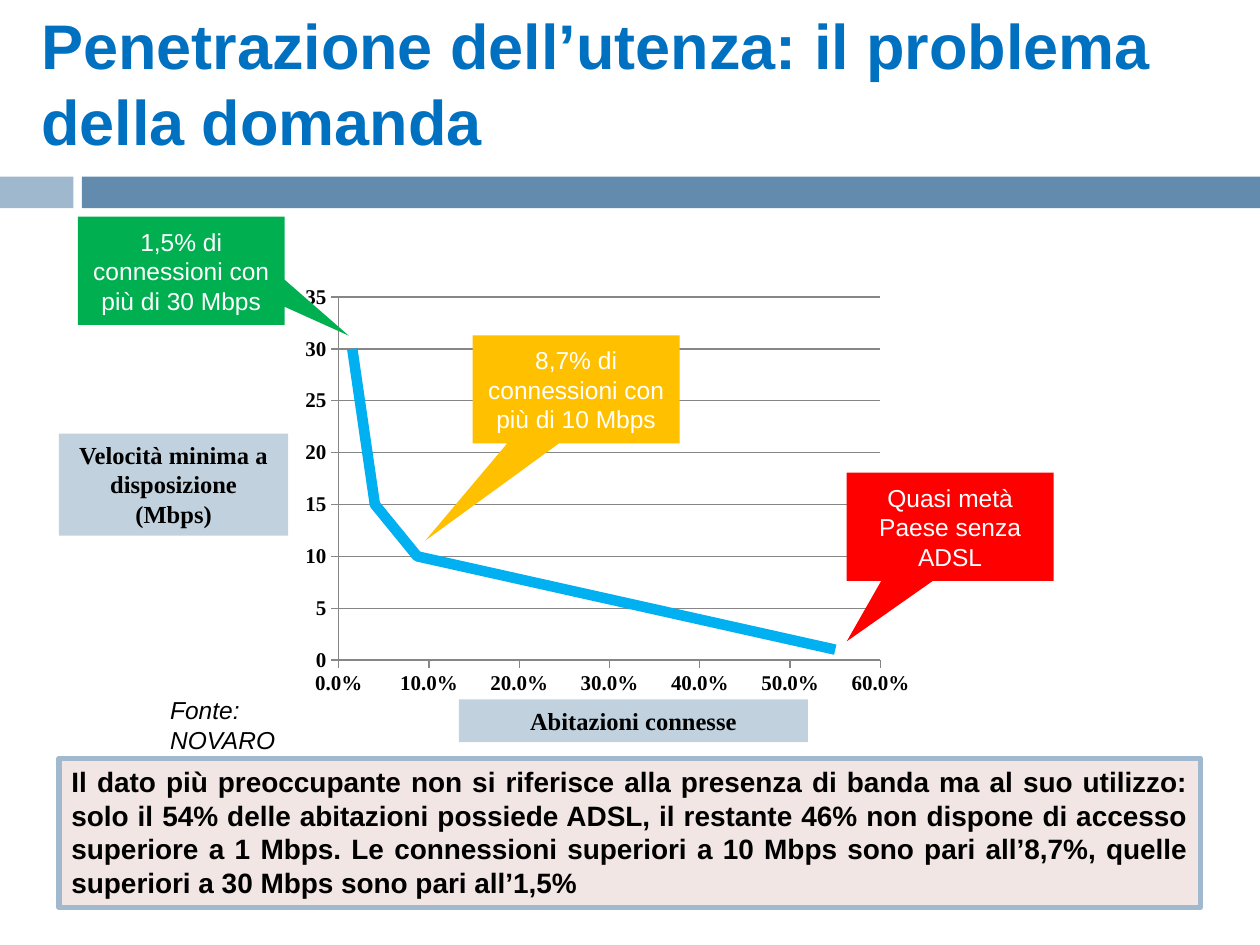
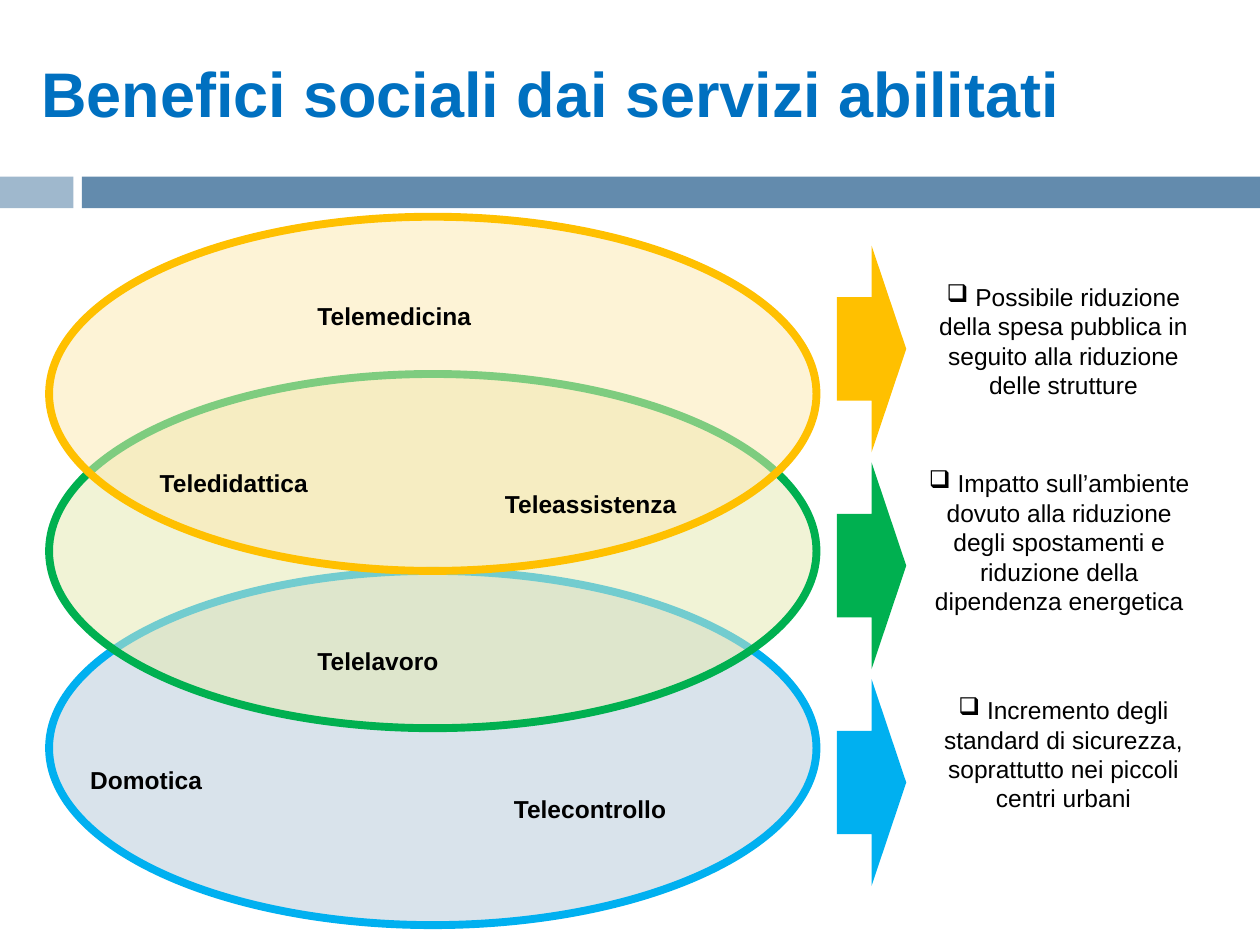
import lxml.etree
import pptx
import pptx.chart.data
import pptx.dml.color
import pptx.enum.chart
import pptx.enum.shapes
import pptx.enum.text
import pptx.oxml.ns
import pptx.util

Cm, Pt = pptx.util.Cm, pptx.util.Pt
SHAPE = pptx.enum.shapes.MSO_SHAPE
ALIGN = pptx.enum.text.PP_ALIGN
ANCHOR = pptx.enum.text.MSO_ANCHOR
qn = pptx.oxml.ns.qn

# Shared look
COLORS = {
    "title": "0070C0", "band_light": "9FB8CD", "band_dark": "638BAD",
    "black": "000000", "white": "FFFFFF", "grid": "868686",
    "red": "FF0000", "green": "00B050", "yellow": "FFC000", "blue": "00B0F0",
    "label": "C1D1DE", "message": "F1E6E3", "message_border": "A1B9CE",
    "pale_blue": "D9E3EB", "pale_green": "E4E9AF", "pale_yellow": "FCE9AF",
}
SANS, SERIF = "Arial", "Times New Roman"
SLIDE_SIZE = (25.4, 19.05)
BANDS = [("band_light", (0, 3.56, 1.48, 0.64)), ("band_dark", (1.65, 3.56, 23.75, 0.64))]

# Slide 1 content: boxes are left, top, width, height in cm
DEMAND_TITLE = ("Penetrazione dell’utenza: il problema della domanda", (0.58, 0.79, 24.13, 1.75))
CHART_BOX = (5.94, 5.56, 12.7, 8.61)
PLOT_AREA = {"x": 0.07, "y": 0.05, "w": 0.86, "h": 0.85}
SPEED_POINTS = [(0.55, 1), (0.087, 10), (0.04, 15), (0.015, 30)]
AXIS_LABELS = [
    ("Velocità minima a disposizione (Mbps)", (1.19, 8.74, 4.62, 2.06)),
    ("Abitazioni connesse", (9.25, 14.1, 7.04, 0.86)),
]
MESSAGE = (
    "Il dato più preoccupante non si riferisce alla presenza di banda ma al suo utilizzo: "
    "solo il 54% delle abitazioni possiede ADSL, il restante 46% non dispone di accesso "
    "superiore a 1 Mbps. Le connessioni superiori a 10 Mbps sono pari all’8,7%, quelle "
    "superiori a 30 Mbps sono pari all’1,5%",
    (1.19, 15.29, 23.01, 3.0),
)
CALLOUT_SIZE = (4.17, 2.18)
CALLOUTS = [  # text, colour, position, pointer offset
    ("Quasi metà Paese senza ADSL", "red", (17.07, 9.53), (-0.5, 1.06)),
    ("1,5% di connessioni con più di 30 Mbps", "green", (1.57, 4.37), (0.81, 0.6)),
    ("8,7% di connessioni con più di 10 Mbps", "yellow", (9.53, 6.76), (-0.73, 1.4)),
]
SOURCE = ("Fonte: NOVARO", (3.18, 13.89, 3.94, 0.86))

# Slide 2 content
BENEFITS_TITLE = ("Benefici sociali dai servizi abilitati", (0.58, 0.99, 22.94, 1.75))
ELLIPSE_LEFT, ELLIPSE_SIZE = 0.99, (15.47, 7.14)
ELLIPSES = [  # top, fill, outline, opacity in percent
    (11.51, "pale_blue", "blue", 100),
    (7.54, "pale_green", "green", 50),
    (4.37, "pale_yellow", "yellow", 50),
]
SERVICE_SIZE = (4.37, 0.86)
SERVICES = [
    ("Telemedicina", (6.15, 5.94)), ("Telelavoro", (6.15, 12.9)),
    ("Teledidattica", (2.97, 9.32)), ("Teleassistenza", (9.93, 9.73)),
    ("Domotica", (1.57, 15.29)), ("Telecontrollo", (10.11, 15.88)),
]
ARROW_LEFT, ARROW_TOP, ARROW_SIZE, ARROW_PITCH = 16.87, 4.95, (1.4, 4.17), 4.37
BENEFITS = [
    ("yellow", " Possibile riduzione della spesa pubblica in seguito alla riduzione delle strutture",
     (18.47, 5.56, 5.94, 2.64)),
    ("green", " Impatto sull’ambiente dovuto alla riduzione degli spostamenti e riduzione della "
     "dipendenza energetica", (18.47, 9.32, 5.77, 3.25)),
    ("blue", " Incremento degli standard di sicurezza, soprattutto nei piccoli centri urbani",
     (18.47, 13.89, 5.94, 2.64)),
]


def rgb(name):
    return pptx.dml.color.RGBColor.from_string(COLORS[name])


def lengths(box):
    return [Cm(value) for value in box]


def style_font(font, size, color="black", name=SANS, bold=False, italic=False):
    font.size, font.name, font.bold, font.italic = Pt(size), name, bold, italic
    font.color.rgb = rgb(color)


def write(shape, text, size=14, align=ALIGN.LEFT, anchor=ANCHOR.TOP, wrap=True, bullet=None, **font):
    frame = shape.text_frame
    frame.word_wrap, frame.vertical_anchor = wrap, anchor
    paragraph = frame.paragraphs[0]
    paragraph.alignment = align
    if bullet:
        properties = paragraph._p.get_or_add_pPr()
        properties.set("marL", "0")
        properties.set("indent", "0")
        lxml.etree.SubElement(properties, qn("a:buChar")).set("char", bullet)
    run = paragraph.add_run()
    run.text = text
    style_font(run.font, size, **font)


def add_text(slide, text, box, **options):
    write(slide.shapes.add_textbox(*lengths(box)), text, **options)


def add_shape(slide, kind, box, fill, line=None, line_width=0, opacity=100):
    shape = slide.shapes.add_shape(kind, *lengths(box))
    shape.shadow.inherit = False
    shape.fill.solid()
    shape.fill.fore_color.rgb = rgb(fill)
    if opacity < 100:
        color = shape.fill._xPr.find(qn("a:solidFill"))[0]
        lxml.etree.SubElement(color, qn("a:alpha")).set("val", str(opacity * 1000))
    if line:
        shape.line.color.rgb = rgb(line)
        shape.line.width = Pt(line_width)
    else:
        shape.line.fill.background()
    return shape


def add_slide(presentation, title):
    slide = presentation.slides.add_slide(presentation.slide_layouts[6])
    for color, box in BANDS:
        add_shape(slide, SHAPE.RECTANGLE, box, color)
    text, box = title
    add_text(slide, text, box, size=36, anchor=ANCHOR.MIDDLE, color="title", bold=True)
    return slide


def style_axis(axis, maximum, step, number_format, gridlines):
    axis.minimum_scale, axis.maximum_scale, axis.major_unit = 0, maximum, step
    axis.major_tick_mark = pptx.enum.chart.XL_TICK_MARK.OUTSIDE
    axis.tick_labels.number_format = number_format
    axis.tick_labels.number_format_is_linked = False
    axis.format.line.color.rgb = rgb("grid")
    axis.has_major_gridlines = gridlines
    if gridlines:
        axis.major_gridlines.format.line.color.rgb = rgb("grid")


def add_speed_chart(slide):
    data = pptx.chart.data.XyChartData()
    points = data.add_series("Series 1")
    for share, speed in SPEED_POINTS:
        points.add_data_point(share, speed)
    kind = pptx.enum.chart.XL_CHART_TYPE.XY_SCATTER_SMOOTH_NO_MARKERS
    chart = slide.shapes.add_chart(kind, *lengths(CHART_BOX), data).chart
    chart.has_legend = chart.has_title = False
    style_font(chart.font, 12, name=SERIF, bold=True)
    style_axis(chart.category_axis, 0.6, 0.1, "0.0%", False)
    style_axis(chart.value_axis, 35, 5, "0", True)
    plot = chart.plots[0]
    plot.vary_by_categories = False
    series = plot.series[0]
    series.smooth = True
    series.format.line.color.rgb = rgb("blue")
    series.format.line.width = Pt(6)

    # Fixed inner plot area
    area = chart._chartSpace.chart.plotArea
    for layout in area.findall(qn("c:layout")):
        area.remove(layout)
    layout = lxml.etree.Element(qn("c:layout"))
    area.insert(0, layout)
    manual = lxml.etree.SubElement(layout, qn("c:manualLayout"))
    settings = {"layoutTarget": "inner", "xMode": "edge", "yMode": "edge", **PLOT_AREA}
    for tag, value in settings.items():
        lxml.etree.SubElement(manual, qn(f"c:{tag}")).set("val", str(value))


def build_demand_slide(presentation):
    slide = add_slide(presentation, DEMAND_TITLE)
    add_speed_chart(slide)
    for text, box in AXIS_LABELS:
        label = add_shape(slide, SHAPE.RECTANGLE, box, "label")
        write(label, text, align=ALIGN.CENTER, name=SERIF, bold=True)
    text, box = MESSAGE
    message = add_shape(slide, SHAPE.RECTANGLE, box, "message", "message_border", 3)
    write(message, text, size=16, align=ALIGN.JUSTIFY, bold=True)
    for text, color, position, pointer in CALLOUTS:
        callout = add_shape(slide, SHAPE.RECTANGULAR_CALLOUT, position + CALLOUT_SIZE, color)
        callout.adjustments[0], callout.adjustments[1] = pointer
        write(callout, text, align=ALIGN.CENTER, anchor=ANCHOR.MIDDLE, color="white")
    text, box = SOURCE
    add_text(slide, text, box, wrap=False, italic=True)


def build_benefits_slide(presentation):
    slide = add_slide(presentation, BENEFITS_TITLE)
    # Overlapping service areas
    for top, fill, outline, opacity in ELLIPSES:
        box = (ELLIPSE_LEFT, top) + ELLIPSE_SIZE
        add_shape(slide, SHAPE.OVAL, box, fill, outline, 4.5, opacity)
    for text, position in SERVICES:
        add_text(slide, text, position + SERVICE_SIZE, bold=True)
    # One arrow and one benefit per area
    for index, (color, text, box) in enumerate(BENEFITS):
        arrow_box = (ARROW_LEFT, ARROW_TOP + index * ARROW_PITCH) + ARROW_SIZE
        add_shape(slide, SHAPE.RIGHT_ARROW, arrow_box, color)
        add_text(slide, text, box, align=ALIGN.CENTER, bullet="❑")


def main():
    presentation = pptx.Presentation()
    presentation.slide_width, presentation.slide_height = lengths(SLIDE_SIZE)
    build_demand_slide(presentation)
    build_benefits_slide(presentation)
    presentation.save("out.pptx")


if __name__ == "__main__":
    main()
